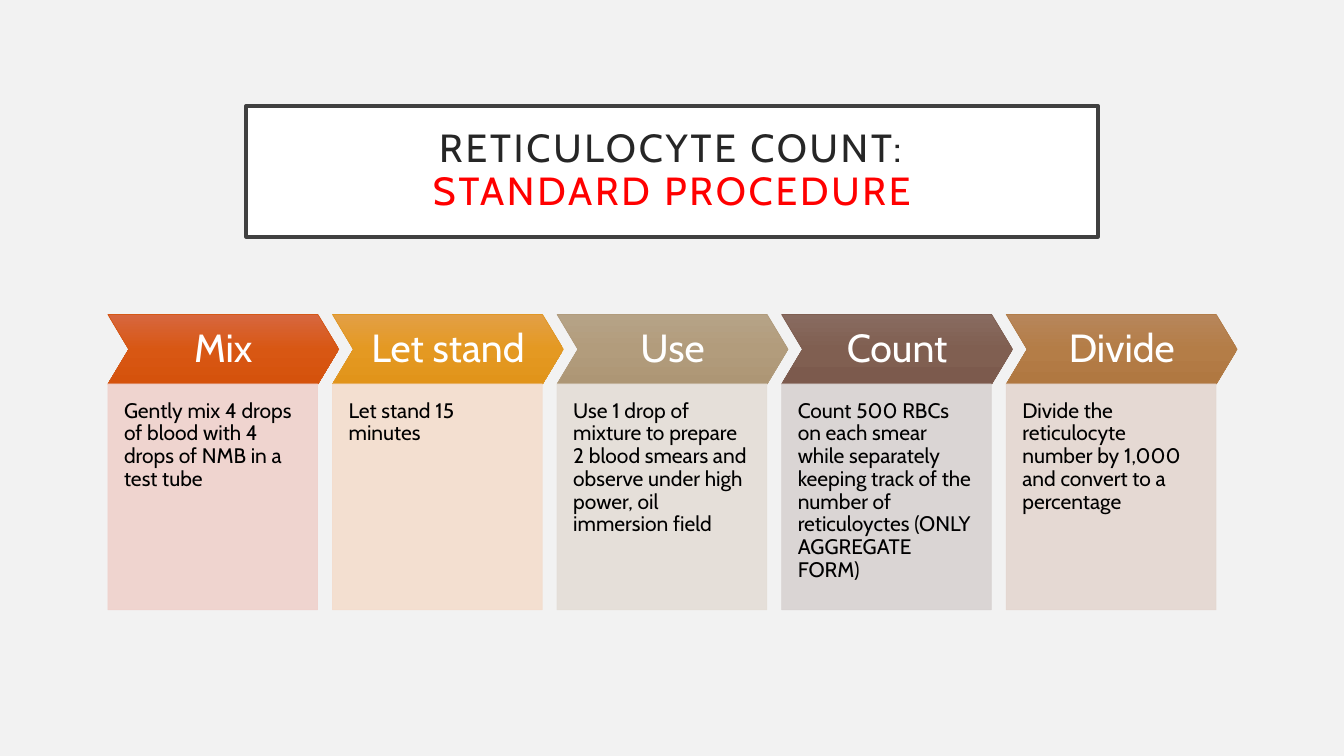
from copy import deepcopy
from dataclasses import dataclass

from lxml.etree import SubElement
from pptx import Presentation
from pptx.dml.color import RGBColor
from pptx.enum.shapes import MSO_SHAPE
from pptx.enum.text import MSO_ANCHOR, MSO_AUTO_SIZE, PP_ALIGN
from pptx.oxml.ns import qn
from pptx.util import Inches, Pt


@dataclass(frozen=True)
class Theme:
    """Colours and type used across the slide."""
    font: str = "Cabin"
    heading_size: int = 28
    body_size: int = 15
    background: str = "F2F2F2"
    white: str = "FFFFFF"
    black: str = "000000"
    title_ink: str = "262626"
    title_accent: str = "FF0000"
    title_border: str = "404040"


@dataclass(frozen=True)
class Step:
    """One stage of the procedure with its colours."""
    heading: str
    detail: str
    gradient: tuple
    outline: str
    tint: str


THEME = Theme()
STEPS = (
    Step("Mix", "Gently mix 4 drops of blood with 4 drops of NMB in a test tube",
         ("D7673F", "D85713", "D5520C"), "D55816", "EFD1CC"),
    Step("Let stand", "Let stand 15 minutes",
         ("E39F45", "E49922", "E1941A"), "E19825", "F4DDCD"),
    Step("Use", "Use 1 drop of mixture to prepare 2 blood smears and observe "
         "under high power, oil immersion field",
         ("B6A387", "B29C7C", "AD9675"), "B19C7D", "E4DED7"),
    Step("Count", "Count 500 RBCs on each smear while separately keeping track of "
         "the number of reticuloyctes (ONLY AGGREGATE FORM)",
         ("886B60", "805F51", "7C5A4D"), "7F5F52", "D8D2D1"),
    Step("Divide", "Divide the reticulocyte number by 1,000 and convert to a percentage",
         ("B7865B", "B47D47", "B07841"), "B27D49", "E4D7D0"),
)


def paint_solid(fill, color):
    """Fill with one colour."""
    fill.solid()
    fill.fore_color.rgb = RGBColor.from_string(color)


def outline(shape, color, width):
    """Draw a plain outline."""
    paint_solid(shape.line.fill, color)
    shape.line.width = Pt(width)


def set_frame(shape, insets, anchor, align):
    """Prepare the text frame and return its first paragraph."""
    frame = shape.text_frame
    frame.word_wrap = True
    frame.auto_size = MSO_AUTO_SIZE.NONE
    frame.vertical_anchor = anchor
    (frame.margin_left, frame.margin_top,
     frame.margin_right, frame.margin_bottom) = map(Inches, insets)
    paragraph = frame.paragraphs[0]
    paragraph.alignment = align
    paragraph.line_spacing = 0.9
    return paragraph


def add_run(paragraph, text, size, color):
    """Append a run in the theme font."""
    run = paragraph.add_run()
    run.text = text
    run.font.name = THEME.font
    run.font.size = Pt(size)
    run.font.color.rgb = RGBColor.from_string(color)
    return run


def add_block(slide, preset, left, top, width, height):
    """Add a preset shape without a shadow."""
    shape = slide.shapes.add_shape(
        preset, Inches(left), Inches(top), Inches(width), Inches(height))
    shape.shadow.inherit = False
    return shape


def place_title(slide, left, top, width, height):
    """Format the title placeholder as a framed two-line heading."""
    title = slide.shapes.title
    title.left, title.top = Inches(left), Inches(top)
    title.width, title.height = Inches(width), Inches(height)
    paint_solid(title.fill, THEME.white)
    outline(title, THEME.title_border, 2.5)
    paragraph = set_frame(title, [0.2] * 4, MSO_ANCHOR.MIDDLE, PP_ALIGN.CENTER)
    subject = add_run(paragraph, "RETICULOCYTE COUNT:", THEME.heading_size, THEME.title_ink)
    paragraph.add_line_break()
    topic = add_run(paragraph, "STANDARD PROCEDURE", THEME.heading_size, THEME.title_accent)
    for run in (subject, topic):
        run.font._element.set("spc", "200")


def add_heading(slide, step, left, top, width, height):
    """Add the gradient chevron that names a step."""
    chevron = add_block(slide, MSO_SHAPE.CHEVRON, left, top, width, height)
    chevron.adjustments[0] = 0.3
    chevron.fill.gradient()
    chevron.fill.gradient_angle = 270
    stop_list = chevron._element.spPr.find(".//" + qn("a:gsLst"))
    stop_list.insert(1, deepcopy(stop_list[0]))
    for stop, color, position in zip(chevron.fill.gradient_stops, step.gradient, (0, 0.5, 1)):
        stop.color.rgb = RGBColor.from_string(color)
        stop.position = position
    outline(chevron, step.outline, 0.5)
    paragraph = set_frame(chevron, [0.08] * 4, MSO_ANCHOR.MIDDLE, PP_ALIGN.CENTER)
    add_run(paragraph, step.heading, THEME.heading_size, THEME.white)


def add_detail(slide, step, left, top, width, height):
    """Add the translucent panel that describes a step."""
    panel = add_block(slide, MSO_SHAPE.RECTANGLE, left, top, width, height)
    paint_solid(panel.fill, step.tint)
    outline(panel, step.tint, 0.5)
    for color in panel._element.spPr.iter(qn("a:srgbClr")):
        SubElement(color, qn("a:alpha"), val="90000")
    paragraph = set_frame(panel, (0.16, 0.16, 0.16, 0.33), MSO_ANCHOR.TOP, PP_ALIGN.LEFT)
    add_run(paragraph, step.detail, THEME.body_size, THEME.black)


def add_process(slide, left, top, width, height):
    """Lay the steps out as equal columns, each chevron above its panel."""
    heading_width, heading_height, tip = 2.29, 0.69, 0.21
    pitch = (width - heading_width) / (len(STEPS) - 1)
    for index, step in enumerate(STEPS):
        column = left + index * pitch
        add_heading(slide, step, column, top, heading_width, heading_height)
        add_detail(slide, step, column, top + heading_height,
                   heading_width - tip, height - heading_height)


def main():
    """Build and save the slide."""
    deck = Presentation()
    deck.slide_width, deck.slide_height = Inches(13.33), Inches(7.5)
    slide = deck.slides.add_slide(deck.slide_layouts[5])
    paint_solid(slide.background.fill, THEME.background)
    place_title(slide, 2.44, 1.05, 8.45, 1.3)
    add_process(slide, 1.07, 3.12, 11.2, 2.93)
    deck.save("out.pptx")


if __name__ == "__main__":
    main()
